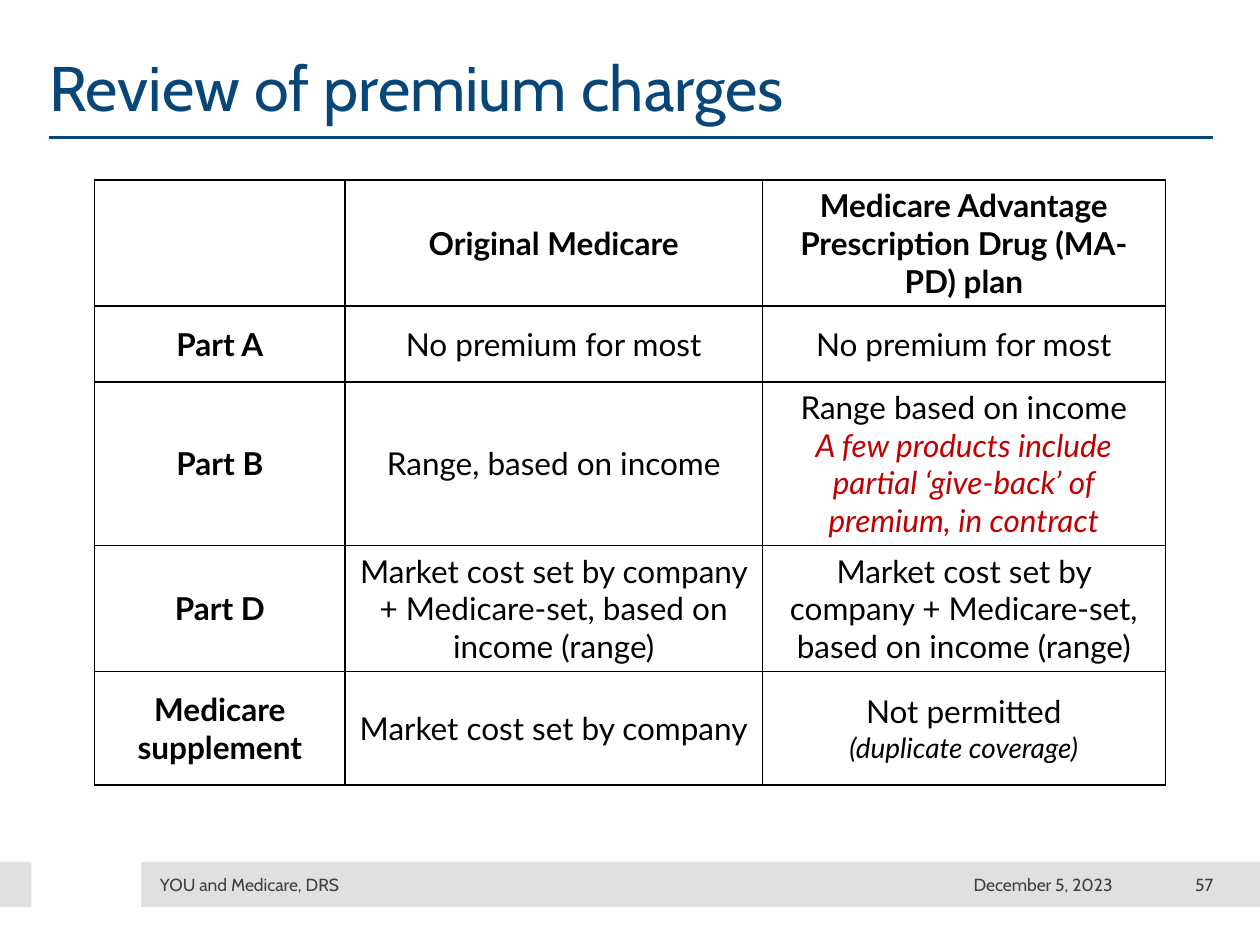
from lxml import etree
from pptx import Presentation
from pptx.dml.color import RGBColor
from pptx.enum import shapes, text
from pptx.oxml import ns
from pptx.util import Inches, Pt

NAVY = RGBColor(0x08, 0x46, 0x78)
GRAY = RGBColor(0xE0, 0xE0, 0xE0)
CHARCOAL = RGBColor(0x40, 0x40, 0x40)
BLACK = RGBColor(0, 0, 0)
RED = RGBColor(0xC0, 0, 0)

TITLE = "Review of premium charges"
PREMIUMS = [
    ("", "Original Medicare", "Medicare Advantage Prescription Drug (MA-PD) plan"),
    ("Part A", "No premium for most", "No premium for most"),
    ("Part B", "Range, based on income",
     "Range based on income\n"
     "A few products include partial ‘give-back’ of premium, in contract"),
    ("Part D",
     "Market cost set by company + Medicare-set, based on income (range)",
     "Market cost set by company + Medicare-set, based on income (range)"),
    ("Medicare supplement", "Market cost set by company",
     "Not permitted\n(duplicate coverage)"),
]
NOTE_STYLES = {2: (18, RED), 4: (16, BLACK)}
COLUMN_WIDTHS = [1.99, 3.31, 3.2]
ROW_HEIGHTS = [1, 0.6, 1.3, 1, 0.9]
BANDS = [(1.12, 8.88), (0, 0.25)]
FOOTERS = [
    ("YOU and Medicare, DRS", 1.27, 3.96, text.PP_ALIGN.LEFT),
    ("December 5, 2023", 6.5, 2.33, text.PP_ALIGN.RIGHT),
    ("57", 8.93, 0.7, text.PP_ALIGN.RIGHT),
]


def format_runs(paragraph, font_name, size, color, bold=False, italic=False):
    for run in paragraph.runs:
        font = run.font
        font.name, font.size = font_name, Pt(size)
        font.bold, font.italic = bold, italic
        font.color.rgb = color


def clear_margins(frame):
    frame.margin_left = frame.margin_right = 0
    frame.margin_top = frame.margin_bottom = 0
    frame.vertical_anchor = text.MSO_ANCHOR.MIDDLE
    frame.word_wrap = True
    frame.auto_size = text.MSO_AUTO_SIZE.NONE


def add_borders(cell):
    properties = cell._tc.get_or_add_tcPr()
    for position, side in enumerate(("lnL", "lnR", "lnT", "lnB")):
        border = etree.Element(ns.qn(f"a:{side}"), w=str(Pt(1)))
        fill = etree.SubElement(border, ns.qn("a:solidFill"))
        etree.SubElement(fill, ns.qn("a:srgbClr"), val=str(BLACK))
        properties.insert(position, border)


def add_footer_bands(slide):
    for left, width in BANDS:
        band = slide.shapes.add_shape(
            shapes.MSO_SHAPE.RECTANGLE,
            Inches(left), Inches(6.84), Inches(width), Inches(0.36))
        band.shadow.inherit = False
        band.fill.solid()
        band.fill.fore_color.rgb = GRAY
        band.line.fill.background()


def add_title(slide):
    rule = slide.shapes.add_connector(
        shapes.MSO_CONNECTOR.STRAIGHT,
        Inches(0.39), Inches(1.09), Inches(9.63), Inches(1.09))
    rule.line.color.rgb = NAVY
    rule.line.width = Pt(2)
    etree.SubElement(rule._element.spPr, ns.qn("a:effectLst"))

    title = slide.shapes.title
    title.left, title.top = Inches(0.39), Inches(0.36)
    title.width, title.height = Inches(9.24), Inches(0.73)
    title.text_frame.text = TITLE
    clear_margins(title.text_frame)
    heading = title.text_frame.paragraphs[0]
    heading.alignment = text.PP_ALIGN.LEFT
    heading.line_spacing = 0.9
    format_runs(heading, "Cabin", 36, NAVY)


def add_premium_table(slide):
    table = slide.shapes.add_table(
        len(PREMIUMS), len(COLUMN_WIDTHS), Inches(0.75), Inches(1.43),
        Inches(sum(COLUMN_WIDTHS)), Inches(sum(ROW_HEIGHTS))).table
    table.horz_banding = False
    for column, width in zip(table.columns, COLUMN_WIDTHS):
        column.width = Inches(width)
    for row, height in zip(table.rows, ROW_HEIGHTS):
        row.height = Inches(height)

    for r, entries in enumerate(PREMIUMS):
        for c, entry in enumerate(entries):
            cell = table.cell(r, c)
            cell.text_frame.text = entry
            cell.vertical_anchor = text.MSO_ANCHOR.MIDDLE
            cell.fill.background()
            add_borders(cell)
            for n, paragraph in enumerate(cell.text_frame.paragraphs):
                paragraph.alignment = text.PP_ALIGN.CENTER
                size, color = NOTE_STYLES[r] if n else (18, BLACK)
                format_runs(paragraph, "Lato", size, color,
                            bold=r == 0 or c == 0, italic=n > 0)


def add_footers(slide):
    for wording, left, width, alignment in FOOTERS:
        footer = slide.shapes.add_textbox(
            Inches(left), Inches(6.91), Inches(width), Inches(0.22))
        footer.text_frame.text = wording
        clear_margins(footer.text_frame)
        paragraph = footer.text_frame.paragraphs[0]
        paragraph.alignment = alignment
        format_runs(paragraph, "Cabin", 10, CHARCOAL)


def main():
    deck = Presentation()
    deck.slide_width, deck.slide_height = Inches(10), Inches(7.5)
    slide = deck.slides.add_slide(deck.slide_layouts[5])
    add_footer_bands(slide)
    add_title(slide)
    add_premium_table(slide)
    add_footers(slide)
    deck.save("out.pptx")


if __name__ == "__main__":
    main()
